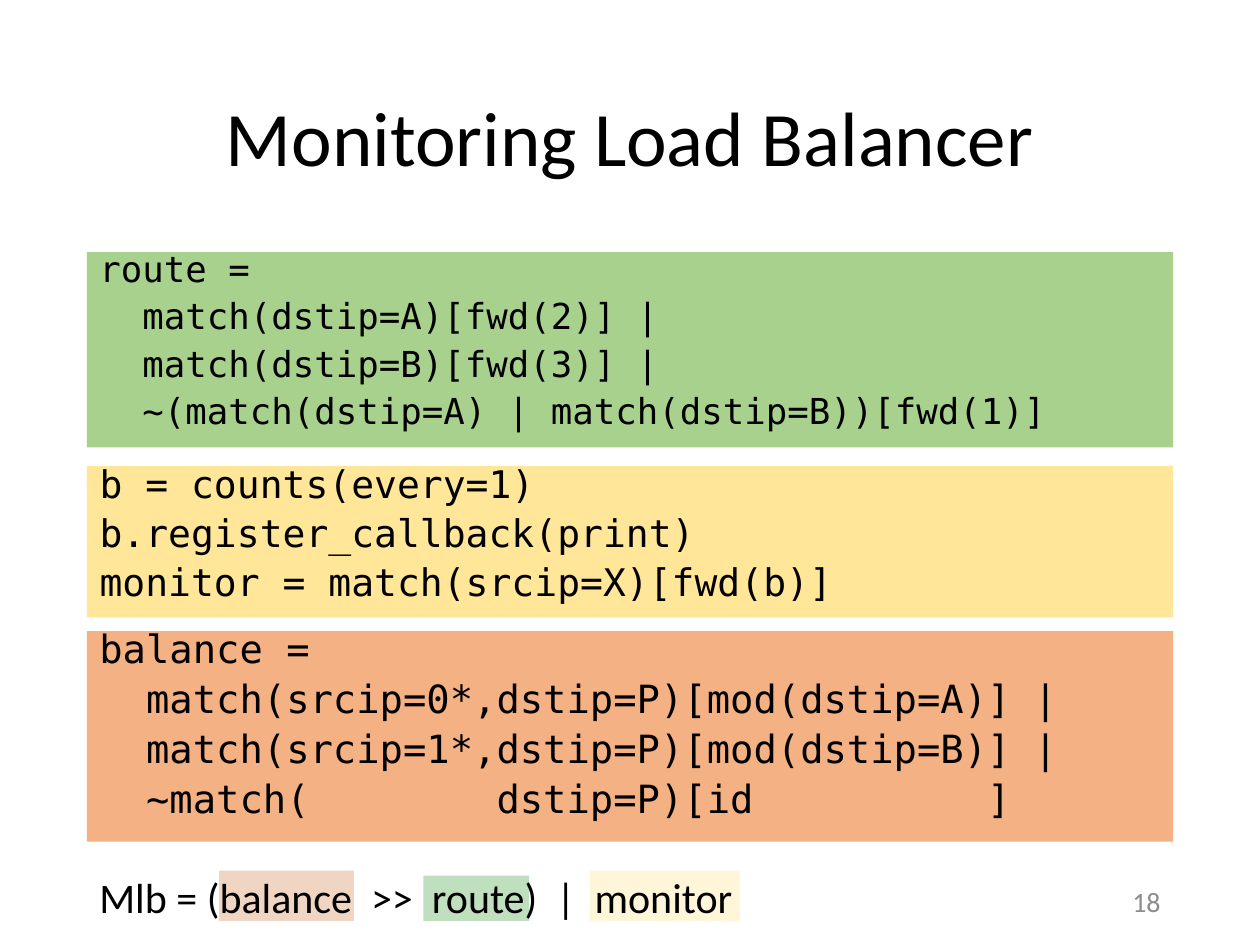
from lxml import etree
from pptx import Presentation
from pptx.dml.color import RGBColor
from pptx.enum.shapes import MSO_SHAPE
from pptx.enum.text import MSO_ANCHOR, MSO_AUTO_SIZE, PP_ALIGN
from pptx.oxml.ns import qn
from pptx.util import Emu, Pt

RECTANGLE = MSO_SHAPE.RECTANGLE
TOP, MIDDLE = MSO_ANCHOR.TOP, MSO_ANCHOR.MIDDLE
LEFT, CENTER, RIGHT = PP_ALIGN.LEFT, PP_ALIGN.CENTER, PP_ALIGN.RIGHT
NO_FIT = MSO_AUTO_SIZE.NONE

EMU_PER_PX = 9144  # 100 px to the inch
TITLE_AND_CONTENT = 1
MARGIN, CONTENT_WIDTH = 69, 862
COLORS = {
    "text": "000000",
    "muted": "8C8C8C",
    "route": "A9D18E",
    "monitor": "FFE699",
    "balance": "F4B183",
    "route mark": "008000",
    "monitor mark": "FFD966",
    "balance mark": "C55A11",
}

ROUTE_CODE = [
    "route =",
    "  match(dstip=A)[fwd(2)] |",
    "  match(dstip=B)[fwd(3)] |",
    "  ~(match(dstip=A) | match(dstip=B))[fwd(1)]",
]
MONITOR_CODE = [
    "b = counts(every=1)",
    "b.register_callback(print)",
    "monitor = match(srcip=X)[fwd(b)]",
]
BALANCE_CODE = [
    "balance =",
    "  match(srcip=0*,dstip=P)[mod(dstip=A)] |",
    "  match(srcip=1*,dstip=P)[mod(dstip=B)] |",
    "  ~match(        dstip=P)[id          ]",
]
MARKS = [
    ("monitor mark", (468, 691, 119, 40)),
    ("route mark", (336, 695, 84, 36)),
    ("balance mark", (174, 691, 107, 40)),
]


def px(length):
    return Emu(length * EMU_PER_PX)


def color(name):
    return RGBColor.from_string(COLORS[name])


class SlideBuilder:
    text_font = "Calibri"
    code_font = "DejaVu Sans Mono"

    def __init__(self, slide):
        self.slide = slide

    def place(self, shape, bounds):
        shape.left, shape.top, shape.width, shape.height = map(px, bounds)

    def fill(self, shape, color_name):
        shape.fill.solid()
        shape.fill.fore_color.rgb = color(color_name)
        shape.line.fill.background()

    def set_text(self, shape, lines, size, font=text_font, color_name="text",
                 align=LEFT, anchor=TOP):
        frame = shape.text_frame
        frame.word_wrap = True
        frame.auto_size = NO_FIT
        frame.vertical_anchor = anchor
        frame.text = "\n".join(lines)
        for para in frame.paragraphs:
            para.alignment = align
            para.font.name = font
            para.font.size = Pt(size)
            para.font.color.rgb = color(color_name)

    def title(self, text, bounds):
        title = self.slide.shapes.title
        self.place(title, bounds)
        self.set_text(title, [text], 44, align=CENTER, anchor=MIDDLE)
        title.text_frame.paragraphs[0].line_spacing = 0.9

    def rectangle(self, shapes, bounds, color_name):
        box = shapes.add_shape(RECTANGLE, *map(px, bounds))
        box.shadow.inherit = False
        self.fill(box, color_name)
        return box

    def code(self, box, lines, size):
        self.set_text(box, lines, size, self.code_font)
        for para in box.text_frame.paragraphs:
            para.line_spacing = 0.7
            para.space_before = Pt(10)

    def code_box(self, lines, size, top, height, color_name):
        bounds = (MARGIN, top, CONTENT_WIDTH, height)
        box = self.rectangle(self.slide.shapes, bounds, color_name)
        self.code(box, lines, size)

    def code_body(self, lines, size, top, height, color_name):
        """Show code without bullets in the body placeholder."""
        body = self.slide.placeholders[1]
        self.place(body, (MARGIN, top, CONTENT_WIDTH, height))
        self.fill(body, color_name)
        self.code(body, lines, size)
        for para in body.text_frame.paragraphs:
            properties = para._p.get_or_add_pPr()
            properties.set("marL", "0")
            properties.set("indent", "0")
            no_bullet = etree.Element(qn("a:buNone"))
            properties.find(qn("a:defRPr")).addprevious(no_bullet)

    def mark(self, shapes, bounds, color_name):
        """Add a highlight at 25% opacity."""
        box = self.rectangle(shapes, bounds, color_name)
        tint = box._element.spPr.find(qn("a:solidFill"))[0]
        etree.SubElement(tint, qn("a:alpha")).set("val", "25000")

    def text(self, shapes, text, bounds, size, **style):
        box = shapes.add_textbox(*map(px, bounds))
        self.set_text(box, [text], size, **style)


def main():
    deck = Presentation()
    deck.slide_width, deck.slide_height = px(1000), px(750)
    page = deck.slides.add_slide(deck.slide_layouts[TITLE_AND_CONTENT])
    builder = SlideBuilder(page)

    builder.title("Monitoring Load Balancer", (MARGIN, 40, CONTENT_WIDTH, 145))
    builder.code_body(MONITOR_CODE, 21.7, 370, 120, "monitor")
    builder.text(page.shapes, "18", (706, 695, 225, 40), 16,
                 color_name="muted", align=RIGHT, anchor=MIDDLE)
    builder.code_box(ROUTE_CODE, 20.4, 200, 155, "route")
    builder.code_box(BALANCE_CODE, 22.2, 501, 167, "balance")

    formula = page.shapes.add_group_shape().shapes
    for color_name, bounds in MARKS:
        builder.mark(formula, bounds, color_name)
    builder.text(formula, "Mlb = (balance  >>  route)  |  monitor",
                 (MARGIN, 687, 603, 50), 24)

    deck.save("out.pptx")


if __name__ == "__main__":
    main()
